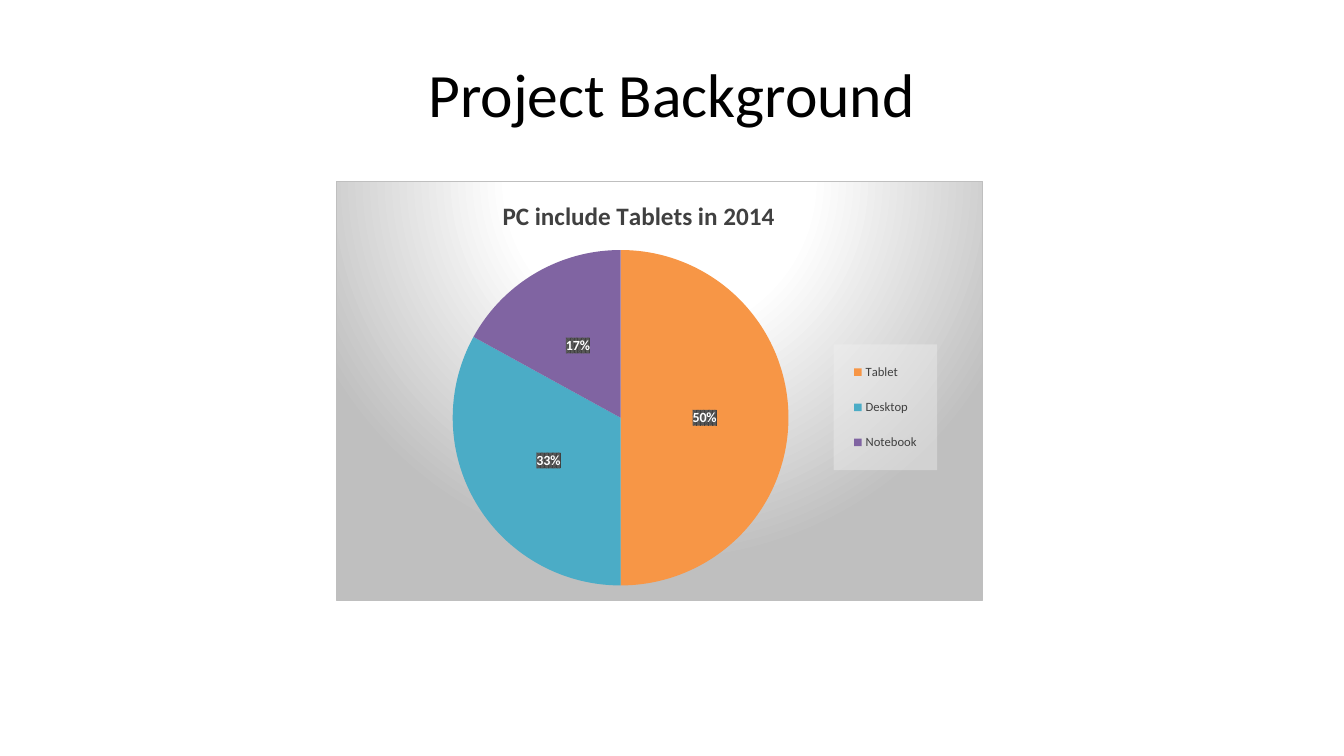
import pptx
import pptx.util
import pptx.dml.color
import pptx.chart.data
import pptx.enum.chart
import pptx.enum.text
import pptx.oxml
import pptx.oxml.ns

Pt = pptx.util.Pt
qn = pptx.oxml.ns.qn
FONT = "Calibri"
HUES = {
    "black": "000000", "white": "FFFFFF", "text": "404040", "tag": "595959",
    "edge": "BFBFBF", "panel": "F2F2F2",
    "Tablet": "F79646", "Desktop": "4BACC6", "Notebook": "8064A2",
}
SHARES = {"Tablet": 50, "Desktop": 33, "Notebook": 17}


def hue(name):
    return pptx.dml.color.RGBColor.from_string(HUES[name])


def style(font, size, name, bold=False):
    font.name = FONT
    font.size = Pt(size)
    font.bold = bold
    font.color.rgb = hue(name)


def make(tag, body):
    spaces = pptx.oxml.ns.nsdecls("c", "a")
    return pptx.oxml.parse_xml(f"<c:{tag} {spaces}>{body}</c:{tag}>")


def tint(name, inner=""):
    return f'<a:srgbClr val="{HUES[name]}">{inner}</a:srgbClr>'


def place(node, **spots):
    for old in node.findall(qn("c:layout")):
        node.remove(old)
    modes = "".join(f'<c:{key}Mode val="edge"/>' for key in "xy")
    sizes = "".join(f'<c:{key} val="{spot}"/>' for key, spot in spots.items())
    target = '<c:layoutTarget val="inner"/>' if node.tag == qn("c:plotArea") else ""
    layout = make("layout", f"<c:manualLayout>{target}{modes}{sizes}</c:manualLayout>")
    after = node.find(qn("c:overlay"))
    if after is None:
        node.insert(0, layout)
    else:
        after.addprevious(layout)


def add_title(slide, text):
    box = slide.shapes.add_textbox(Pt(48), Pt(21.6), Pt(864), Pt(90))
    frame = box.text_frame
    frame.word_wrap = True
    frame.vertical_anchor = pptx.enum.text.MSO_ANCHOR.MIDDLE
    para = frame.paragraphs[0]
    para.alignment = pptx.enum.text.PP_ALIGN.CENTER
    run = para.add_run()
    run.text = text
    style(run.font, 44, "black")


def add_pie(slide):
    data = pptx.chart.data.CategoryChartData()
    data.categories = list(SHARES)
    data.add_series("Series 1", list(SHARES.values()))
    kind = pptx.enum.chart.XL_CHART_TYPE.PIE
    chart = slide.shapes.add_chart(
        kind, Pt(240), Pt(129), Pt(462), Pt(300), data).chart
    style(chart.font, 10, "black")
    plot = chart.plots[0]
    plot.vary_by_categories = True
    for spot, name in enumerate(SHARES):
        fill = plot.series[0].points[spot].format.fill
        fill.solid()
        fill.fore_color.rgb = hue(name)
    return chart


def add_head(chart, text):
    chart.has_title = True
    run = chart.chart_title.text_frame.paragraphs[0].add_run()
    run.text = text
    style(run.font, 18, "text", True)


def add_key(chart):
    chart.has_legend = True
    key = chart.legend
    key.position = pptx.enum.chart.XL_LEGEND_POSITION.RIGHT
    key.include_in_layout = False
    style(key.font, 9, "text")


def add_tags(chart):
    tags = chart.plots[0].series[0].data_labels
    tags.show_value = False
    tags.show_percentage = True
    tags.number_format = "0%"
    tags.number_format_is_linked = False
    tags.position = pptx.enum.chart.XL_LABEL_POSITION.CENTER
    style(tags.font, 10, "white", True)


def finish(chart):
    space = chart.element
    area = space.find(qn("c:chart"))
    title = area.find(qn("c:title"))
    legend = area.find(qn("c:legend"))
    place(area.find(qn("c:plotArea")), x=0.18, y=0.16, w=0.52, h=0.81)
    place(title, x=0.25, y=0.03)
    place(legend, x=0.77, y=0.39, w=0.16, h=0.3)

    stops = "".join(
        f'<a:gs pos="{pos * 1000}">{tint(name)}</a:gs>'
        for pos, name in ((0, "white"), (39, "white"), (100, "edge")))
    area.addnext(make("spPr", (
        f'<a:gradFill><a:gsLst>{stops}</a:gsLst><a:path path="circle">'
        '<a:fillToRect l="50000" t="-80000" r="50000" b="180000"/>'
        f'</a:path></a:gradFill><a:ln w="{Pt(0.75)}">'
        f'<a:solidFill>{tint("edge")}</a:solidFill></a:ln>')))
    panel = tint("panel", '<a:alpha val="39000"/>')
    legend.find(qn("c:overlay")).addnext(
        make("spPr", f"<a:solidFill>{panel}</a:solidFill>"))
    tags = next(space.iter(qn("c:dLbls")))
    tags.find(qn("c:numFmt")).addnext(make("spPr", (
        f'<a:pattFill prst="pct75"><a:fgClr>{tint("text")}</a:fgClr>'
        f'<a:bgClr>{tint("tag")}</a:bgClr></a:pattFill>')))


def main():
    deck = pptx.Presentation()
    deck.slide_width = Pt(960)
    deck.slide_height = Pt(540)
    slide = deck.slides.add_slide(deck.slide_layouts[6])
    add_title(slide, "Project Background")
    chart = add_pie(slide)
    add_head(chart, "PC include Tablets in 2014")
    add_key(chart)
    add_tags(chart)
    finish(chart)
    deck.save("out.pptx")


if __name__ == "__main__":
    main()
